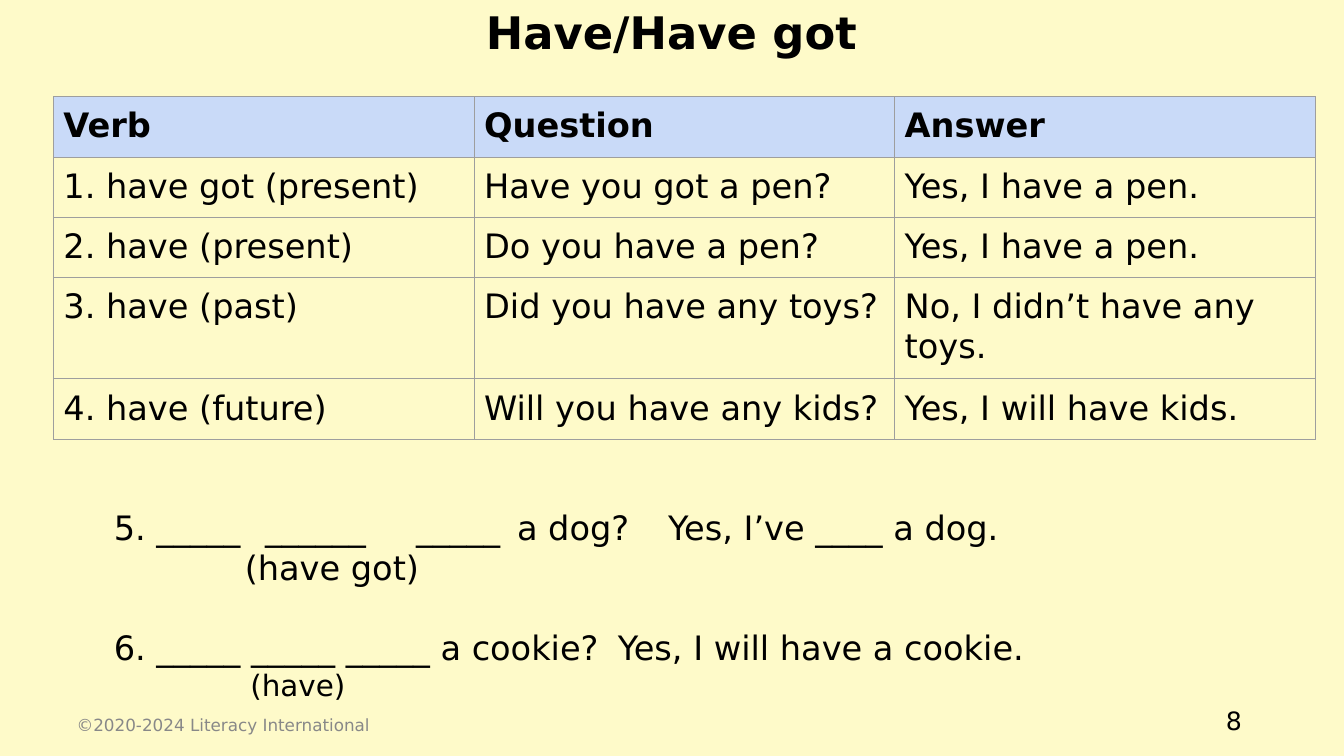
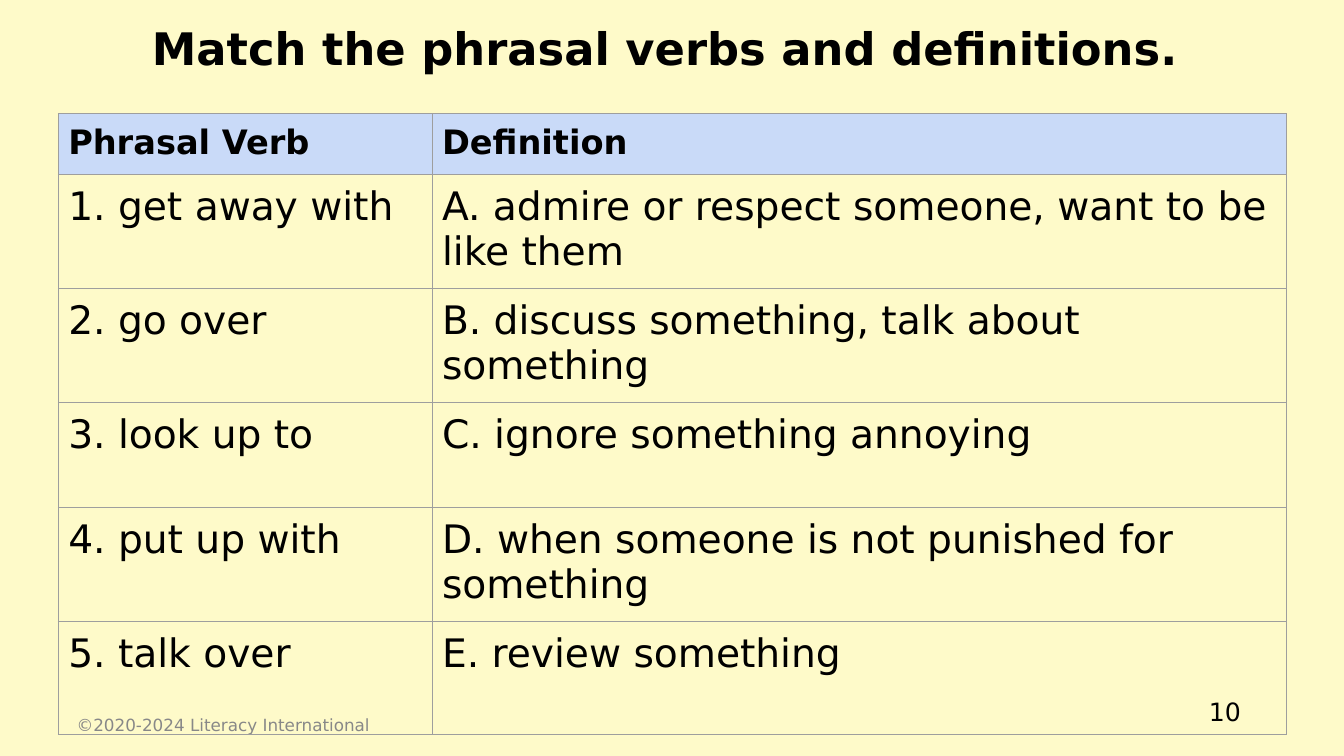
from dataclasses import dataclass

from lxml.etree import SubElement
from pptx import Presentation
from pptx.dml.color import RGBColor
from pptx.enum.text import MSO_ANCHOR, PP_ALIGN
from pptx.oxml.ns import qn
from pptx.slide import Slide
from pptx.table import _Cell
from pptx.text.text import TextFrame, _Paragraph
from pptx.util import Cm, Pt


@dataclass(frozen=True)
class Theme:
    font: str = "DejaVu Sans"
    paper: str = "FEFAC9"
    ink: str = "000000"
    muted: str = "888888"
    header: str = "C9DAF8"
    border: str = "9E9E9E"
    title_size: int = 32
    large_size: int = 28
    body_size: int = 24
    hint_size: int = 21
    number_size: int = 18
    footer_size: int = 12
    exercise_gap: int = 28
    border_width: float = 0.75
    side_inset: float = 0.25
    label_inset: float = 0.13


THEME = Theme()
FOOTER_TEXT = "©2020-2024 Literacy International"


@dataclass(frozen=True)
class Area:
    left: float
    top: float
    width: float
    height: float


@dataclass(frozen=True)
class Grid:
    left: float
    top: float
    widths: list[float]
    heights: list[float]
    rows: list[tuple[str, ...]]
    size: int


@dataclass(frozen=True)
class ExerciseLine:
    text: str
    stops: tuple[float, ...] = ()
    indent: float = 0
    size: int = THEME.body_size
    space_before: int = 0


@dataclass(frozen=True)
class Lesson:
    title: str
    title_area: Area
    number: str
    number_area: Area
    grid: Grid
    exercises: tuple[ExerciseLine, ...] = ()


FOOTER_AREA = Area(1.68, 17.75, 11.43, 1.02)
EXERCISE_AREA = Area(2.62, 12.52, 30.18, 5.51)

LESSONS = [
    Lesson(
        title="Have/Have got",
        title_area=Area(2.08, 0, 29.69, 2.13),
        number="8",
        number_area=Area(23.93, 17.65, 7.62, 1.02),
        grid=Grid(
            left=1.35,
            top=2.44,
            widths=[10.6] * 3,
            heights=[1.52, 1.52, 1.52, 2.55, 1.52],
            rows=[
                ("Verb", "Question", "Answer"),
                ("1. have got (present)", "Have you got a pen?", "Yes, I have a pen."),
                ("2. have (present)", "Do you have a pen?", "Yes, I have a pen."),
                ("3. have (past)", "Did you have any toys?", "No, I didn’t have any toys."),
                ("4. have (future)", "Will you have any kids?", "Yes, I will have kids."),
            ],
            size=THEME.body_size,
        ),
        exercises=(
            ExerciseLine(
                "5. _____\t______\t_____\ta dog?\tYes, I’ve ____ a dog.",
                stops=(3.73, 6.81, 9.74, 14.99),
            ),
            ExerciseLine("(have got)", indent=3.3),
            ExerciseLine(
                "6. _____ _____ _____ a cookie?\tYes, I will have a cookie.",
                stops=(15.16,),
                space_before=THEME.exercise_gap,
            ),
            ExerciseLine("(have)", indent=3.44, size=THEME.hint_size),
        ),
    ),
    Lesson(
        title="Match the phrasal verbs and definitions.",
        title_area=Area(2.01, 0.38, 29.51, 2.13),
        number="10",
        number_area=Area(2.01, 17.17, 29.51, 1.52),
        grid=Grid(
            left=1.47,
            top=2.86,
            widths=[9.42, 21.54],
            heights=[1.53, 2.87, 2.87, 2.64, 2.87, 2.87],
            rows=[
                ("Phrasal Verb", "Definition"),
                ("1. get away with", "A. admire or respect someone, want to be like them"),
                ("2. go over", "B. discuss something, talk about something"),
                ("3. look up to", "C. ignore something annoying"),
                ("4. put up with", "D. when someone is not punished for something"),
                ("5. talk over", "E. review something"),
            ],
            size=THEME.large_size,
        ),
    ),
]


def write(
    para: _Paragraph, text: str, size: int, color: str = THEME.ink, bold: bool = False
) -> None:
    span = para.add_run()
    span.text = text
    formats = {"name": THEME.font, "size": Pt(size), "bold": bold}
    for name, value in formats.items():
        setattr(span.font, name, value)
    span.font.color.rgb = RGBColor.from_string(color)


def add_frame(
    page: Slide,
    area: Area,
    inset: float = THEME.label_inset,
    anchor: MSO_ANCHOR = MSO_ANCHOR.TOP,
) -> TextFrame:
    box = page.shapes.add_textbox(
        Cm(area.left), Cm(area.top), Cm(area.width), Cm(area.height)
    )
    formats = {
        "word_wrap": True,
        "vertical_anchor": anchor,
        "margin_left": Cm(THEME.side_inset),
        "margin_right": Cm(THEME.side_inset),
        "margin_top": Cm(inset),
        "margin_bottom": Cm(inset),
    }
    for name, value in formats.items():
        setattr(box.text_frame, name, value)
    return box.text_frame


def add_label(
    page: Slide,
    area: Area,
    text: str,
    size: int,
    align: PP_ALIGN,
    anchor: MSO_ANCHOR = MSO_ANCHOR.MIDDLE,
    color: str = THEME.ink,
    bold: bool = False,
) -> None:
    para = add_frame(page, area, anchor=anchor).paragraphs[0]
    para.alignment = align
    write(para, text, size, color, bold)


def add_cell_borders(cell: _Cell) -> None:
    properties = cell._tc.get_or_add_tcPr()
    for position, side in enumerate(("lnL", "lnR", "lnT", "lnB")):
        line = properties.makeelement(
            qn(f"a:{side}"), {"w": str(Pt(THEME.border_width))}
        )
        fill = SubElement(line, qn("a:solidFill"))
        SubElement(fill, qn("a:srgbClr"), val=THEME.border)
        properties.insert(position, line)


def fill_cell(cell: _Cell, text: str, size: int, is_header: bool) -> None:
    for side in ("left", "right", "top", "bottom"):
        setattr(cell, f"margin_{side}", Cm(THEME.side_inset))
    if is_header:
        cell.fill.solid()
        cell.fill.fore_color.rgb = RGBColor.from_string(THEME.header)
    else:
        cell.fill.background()
    add_cell_borders(cell)
    write(cell.text_frame.paragraphs[0], text, size, bold=is_header)


def add_grid(page: Slide, grid: Grid) -> None:
    table = page.shapes.add_table(
        len(grid.heights),
        len(grid.widths),
        Cm(grid.left),
        Cm(grid.top),
        Cm(sum(grid.widths)),
        Cm(sum(grid.heights)),
    ).table
    table.horz_banding = False
    for column, width in zip(table.columns, grid.widths):
        column.width = Cm(width)
    for row_index, (height, texts) in enumerate(zip(grid.heights, grid.rows)):
        table.rows[row_index].height = Cm(height)
        is_header = row_index == 0
        size = THEME.body_size if is_header else grid.size
        for column_index, text in enumerate(texts):
            fill_cell(table.cell(row_index, column_index), text, size, is_header)


def add_exercises(page: Slide, lines: tuple[ExerciseLine, ...]) -> None:
    frame = add_frame(page, EXERCISE_AREA, inset=THEME.side_inset)
    for index, line in enumerate(lines):
        para = frame.add_paragraph() if index else frame.paragraphs[0]
        properties = para._p.get_or_add_pPr()
        properties.set("marL", str(Cm(line.indent)))
        properties.set("indent", "0")
        if line.space_before:
            para.space_before = Pt(line.space_before)
        if line.stops:
            tabs = SubElement(properties, qn("a:tabLst"))
            for stop in line.stops:
                SubElement(tabs, qn("a:tab"), pos=str(Cm(stop)), algn="l")
        write(para, line.text, line.size)


def add_lesson(page: Slide, lesson: Lesson) -> None:
    add_label(
        page, lesson.title_area, lesson.title, THEME.title_size,
        PP_ALIGN.CENTER, anchor=MSO_ANCHOR.TOP, bold=True,
    )
    add_label(
        page, lesson.number_area, lesson.number, THEME.number_size, PP_ALIGN.RIGHT
    )
    add_label(
        page, FOOTER_AREA, FOOTER_TEXT, THEME.footer_size,
        PP_ALIGN.LEFT, color=THEME.muted,
    )
    if lesson.exercises:
        add_exercises(page, lesson.exercises)
    add_grid(page, lesson.grid)


def main() -> None:
    deck = Presentation()
    deck.slide_width, deck.slide_height = Cm(33.87), Cm(19.05)
    background = deck.slide_master.background.fill
    background.solid()
    background.fore_color.rgb = RGBColor.from_string(THEME.paper)
    blank = deck.slide_layouts[6]
    for lesson in LESSONS:
        add_lesson(deck.slides.add_slide(blank), lesson)
    deck.save("out.pptx")


if __name__ == "__main__":
    main()
